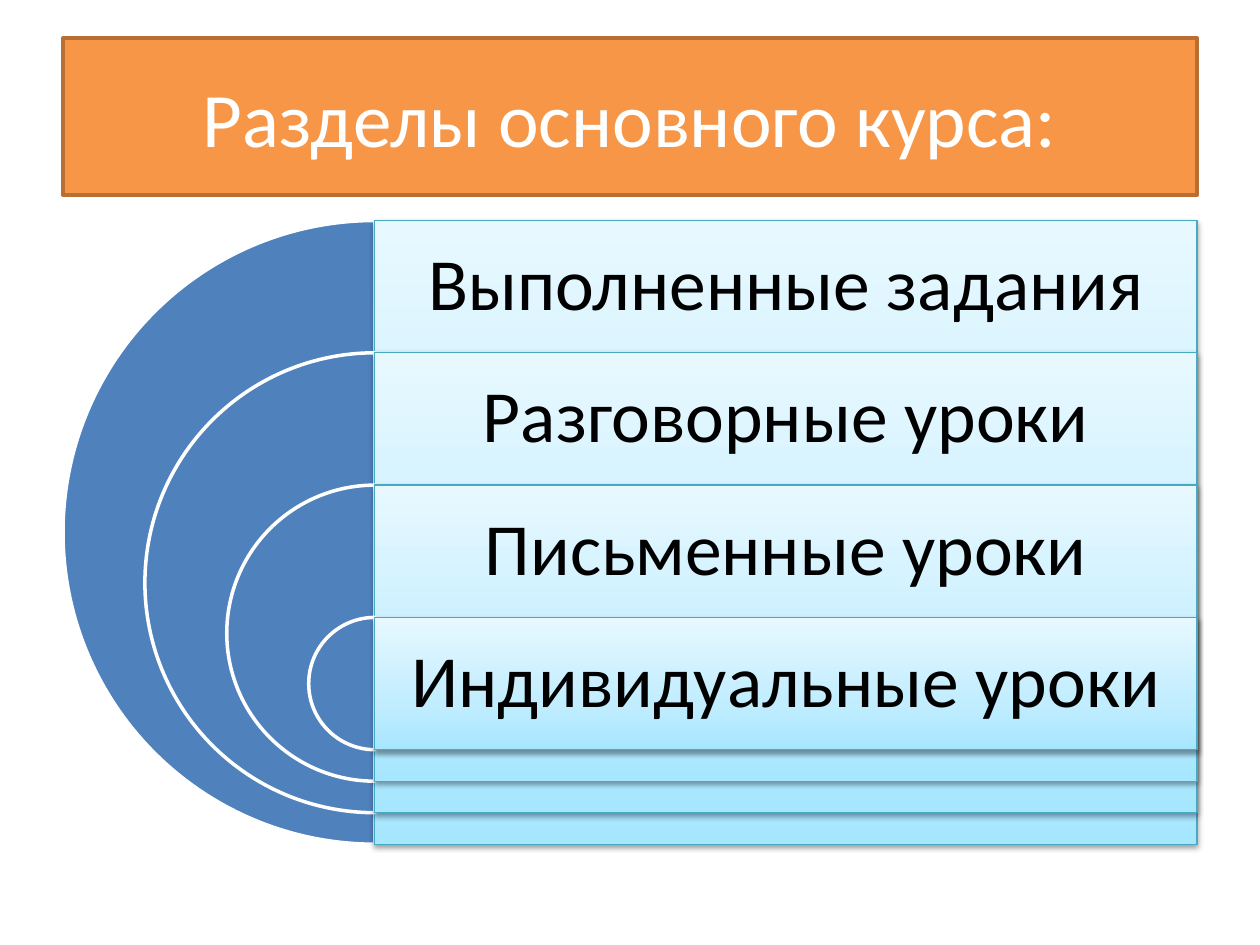
from copy import deepcopy

from lxml import etree
from pptx import Presentation
from pptx.dml.color import RGBColor
from pptx.enum.shapes import MSO_SHAPE
from pptx.enum.text import MSO_ANCHOR, PP_ALIGN
from pptx.oxml.ns import qn
from pptx.util import Inches, Pt

PIE, RECTANGLE = MSO_SHAPE.PIE, MSO_SHAPE.RECTANGLE
MIDDLE, CENTER = MSO_ANCHOR.MIDDLE, PP_ALIGN.CENTER
TITLE_ONLY = 5
TITLE = "Разделы основного курса:"
SECTIONS = [
    "Выполненные задания",
    "Разговорные уроки",
    "Письменные уроки",
    "Индивидуальные уроки",
]
BAND_STOPS = [(0, "A7E6FF"), (0.35, "C1EDFF"), (1, "E7F8FF")]


def color(value):
    """Turn a hex string into a colour."""
    return RGBColor.from_string(value)


def place(shape, box):
    """Move a shape to a box of left, top, width and height in inches."""
    for name, value in zip(("left", "top", "width", "height"), box):
        setattr(shape, name, Inches(value))


def set_outline(shape, value, width):
    """Give a shape a solid outline."""
    shape.line.color.rgb = color(value)
    shape.line.width = Pt(width)


def write_text(shape, text, size, value, margin, line_spacing):
    """Write one centred line of text in a shape."""
    frame = shape.text_frame
    frame_format = {"word_wrap": True, "vertical_anchor": MIDDLE}
    for side in ("left", "top", "right", "bottom"):
        frame_format[f"margin_{side}"] = Inches(margin)
    for name, setting in frame_format.items():
        setattr(frame, name, setting)
    paragraph = frame.paragraphs[0]
    paragraph.text = text
    paragraph.alignment = CENTER
    paragraph.line_spacing = line_spacing
    font = paragraph.runs[0].font
    for name, setting in {"name": "Calibri", "size": Pt(size)}.items():
        setattr(font, name, setting)
    font.color.rgb = color(value)


def add_title(slide, box):
    """Format the title placeholder as an orange banner."""
    title = slide.shapes.title
    place(title, box)
    title.fill.solid()
    title.fill.fore_color.rgb = color("F79646")
    set_outline(title, "B76F34", 2)
    write_text(title, TITLE, 44, "FFFFFF", 0.1, 1.0)


def add_half_disc(slide, box):
    """Add the left half of a disc inside a square box."""
    disc = slide.shapes.add_shape(PIE, *map(Inches, box))
    disc.adjustments[0], disc.adjustments[1] = 54, 162
    disc.shadow.inherit = False
    disc.fill.solid()
    disc.fill.fore_color.rgb = color("4F81BD")
    set_outline(disc, "FFFFFF", 2)


def fill_gradient(shape, stops, angle):
    """Fill a shape with a linear gradient of three stops."""
    fill = shape.fill
    fill.gradient()
    fill.gradient_angle = angle
    first = shape._element.spPr.find(".//" + qn("a:gs"))
    first.addnext(deepcopy(first))
    for stop, (position, value) in zip(fill.gradient_stops, stops):
        stop.position = position
        stop.color.rgb = color(value)


def add_drop_shadow(shape):
    """Add a soft black shadow below a shape."""
    shape.shadow.inherit = False
    effects = shape._element.spPr.find(qn("a:effectLst"))
    shadow = etree.SubElement(
        effects, qn("a:outerShdw"), blurRad=str(Pt(3.1)), dist=str(Pt(1.6)),
        dir="5400000", rotWithShape="0")
    black = etree.SubElement(shadow, qn("a:srgbClr"), val="000000")
    etree.SubElement(black, qn("a:alpha"), val="38000")


def add_band(slide, box, text, label_height):
    """Add a gradient panel with a label along its top."""
    left, top, width, height = box
    panel = slide.shapes.add_shape(RECTANGLE, *map(Inches, box))
    fill_gradient(panel, BAND_STOPS, 90)
    set_outline(panel, "46AAC5", 0.75)
    add_drop_shadow(panel)
    label = slide.shapes.add_textbox(
        *map(Inches, (left, top, width, label_height)))
    write_text(label, text, 42, "000000", 0.17, 0.9)


def add_nested_target(slide, box, sections):
    """Nest half discs and their bands, from the largest to the smallest."""
    left, top, width, height = box
    step = 1.05
    shrink = (height - step) / (len(sections) - 1)
    center = left + height / 2
    for index, text in enumerate(sections):
        size = height - index * shrink
        row_top = top + index * step
        add_half_disc(slide, (center - size / 2, row_top, size, size))
        band = (center, row_top, left + width - center, size)
        add_band(slide, band, text, step)


def main():
    """Build and save the presentation."""
    presentation = Presentation()
    presentation.slide_width = Inches(10)
    presentation.slide_height = Inches(7.5)
    slide = presentation.slides.add_slide(
        presentation.slide_layouts[TITLE_ONLY])
    add_title(slide, (0.5, 0.3, 9, 1.25))
    add_nested_target(slide, (0.5, 1.75, 9, 4.95), SECTIONS)
    presentation.save("out.pptx")


if __name__ == "__main__":
    main()
